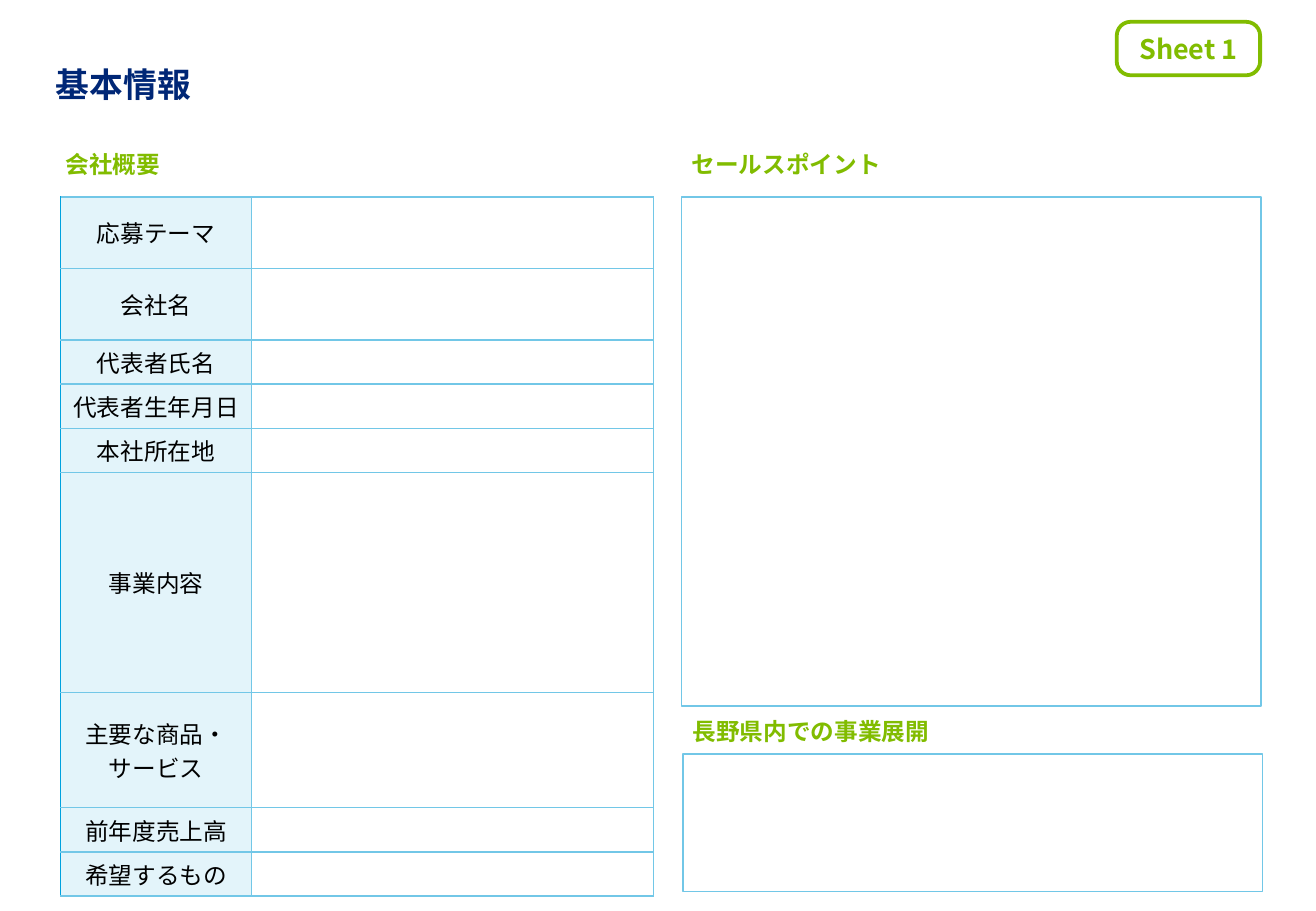
import pptx
import pptx.util
import pptx.dml.color
import pptx.enum.shapes
import pptx.enum.text
import pptx.oxml
import pptx.oxml.ns

WIDE, HIGH = 10.83, 7.5
LEFT, RIGHT, TOP = 0.5, 5.61, 1.62
HALF = 4.77
SANS, NOTO = "Arial", "Noto Sans CJK JP"
NAVY, GREEN, BLUE, EDGE = "002776", "81BC00", "72C7E7", "00A1DE"
PALE, BLACK, WHITE = "E3F4FA", "000000", "FFFFFF"

TITLE = "基本情報"
BADGE = "Sheet 1"
HEADS = [
    ("会社概要", 0.46, 1.11, 0.47),
    ("セールスポイント", RIGHT, 1.11, 0.47),
    ("長野県内での事業展開", RIGHT + 0.01, 5.85, 0.32),
]
BOXES = [(RIGHT, TOP, 4.19), (RIGHT + 0.01, 6.21, 1.13)]
COLS = [1.57, 3.31]
ROWS = [
    ("応募テーマ", 0.59),
    ("会社名", 0.59),
    ("代表者氏名", 0.36),
    ("代表者生年月日", 0.36),
    ("本社所在地", 0.36),
    ("事業内容", 1.81),
    ("主要な商品・サービス", 0.95),
    ("前年度売上高", 0.36),
    ("希望するもの", 0.36),
]

Inch, Pt = pptx.util.Inches, pptx.util.Pt
Align, Anchor = pptx.enum.text.PP_ALIGN, pptx.enum.text.MSO_ANCHOR
Shape = pptx.enum.shapes.MSO_SHAPE


def tint(text):
    return pptx.dml.color.RGBColor.from_string(text)


def node(xml):
    return pptx.oxml.parse_xml(xml.replace(">", f" {pptx.oxml.ns.nsdecls('a')}>", 1))


def style(para, size, face, color, bold=False, align=Align.LEFT):
    para.alignment = align
    for run in para.runs:
        run.font.size, run.font.name, run.font.bold = Pt(size), face, bold
        run.font.color.rgb = tint(color)
        run.font._element.find(pptx.oxml.ns.qn("a:latin")).addnext(
            node(f'<a:ea typeface="{NOTO}"></a:ea>'))


def place(item, left, top, width, height):
    item.left, item.top = Inch(left), Inch(top)
    item.width, item.height = Inch(width), Inch(height)


def frame(item, text, pad, anchor):
    area = item.text_frame
    area.text = text
    area.word_wrap = True
    area.auto_size = pptx.enum.text.MSO_AUTO_SIZE.NONE
    area.vertical_anchor = anchor
    area.margin_left = area.margin_right = Inch(pad)
    area.margin_top = area.margin_bottom = Inch(pad)
    return area.paragraphs[0]


def box(kind, left, top, width, height, color, weight):
    item = slide.shapes.add_shape(
        kind, Inch(left), Inch(top), Inch(width), Inch(height))
    item.shadow.inherit = False
    item.fill.solid()
    item.fill.fore_color.rgb = tint(WHITE)
    item.line.color.rgb = tint(color)
    item.line.width = Pt(weight)
    return item


def edges(cell, first):
    prop = cell._tc.get_or_add_tcPr()
    for spot, side in enumerate("LRTB"):
        color = EDGE if first and side == "L" else BLUE
        prop.insert(spot, node(
            f'<a:ln{side} w="12700"><a:solidFill><a:srgbClr val="{color}"/>'
            f'</a:solidFill></a:ln{side}>'))


deck = pptx.Presentation()
deck.slide_width, deck.slide_height = Inch(WIDE), Inch(HIGH)
slide = deck.slides.add_slide(deck.slide_layouts[1])

title, body = slide.placeholders
place(title, 0.46, 0.15, 9.92, 0.71)
style(frame(title, TITLE, 0, Anchor.BOTTOM), 20, SANS, NAVY, True)

for spot, (text, left, top, height) in enumerate(HEADS):
    item = slide.shapes.add_textbox(0, 0, 0, 0) if spot else body
    place(item, left, top, 4.72, height)
    para = frame(item, text, 0.08, Anchor.MIDDLE)
    style(para, 14, SANS, GREEN, True)
    para.line_spacing, para.space_before = 1.06, Pt(0)
    prop = para._p.get_or_add_pPr()
    prop.set("marL", "0")
    prop.set("indent", "0")
    prop.append(node("<a:buNone></a:buNone>"))

grid = slide.shapes.add_table(
    len(ROWS), len(COLS), Inch(LEFT), Inch(TOP),
    Inch(sum(COLS)), Inch(sum(high for text, high in ROWS))).table
for col, wide in enumerate(COLS):
    grid.columns[col].width = Inch(wide)
for row, (text, high) in enumerate(ROWS):
    grid.rows[row].height = Inch(high)
    for col in range(len(COLS)):
        cell = grid.cell(row, col)
        cell.margin_left = cell.margin_right = Inch(0.04)
        cell.margin_top = cell.margin_bottom = Inch(0.04)
        cell.vertical_anchor = Anchor.MIDDLE
        cell.fill.solid()
        cell.fill.fore_color.rgb = tint(WHITE if col else PALE)
        para = cell.text_frame.paragraphs[0]
        if col:
            para._p.append(node('<a:endParaRPr sz="1400"></a:endParaRPr>'))
        else:
            para.text = text
            style(para, 14, NOTO, BLACK, align=Align.CENTER)
        edges(cell, col == 0)

for left, top, height in BOXES:
    box(Shape.RECTANGLE, left, top, HALF, height, BLUE, 1)

badge = box(Shape.ROUNDED_RECTANGLE, 9.19, 0.18, 1.18, 0.44, GREEN, 2.25)
badge.adjustments[0] = 0.26
style(frame(badge, BADGE, 0.08, Anchor.MIDDLE), 16, NOTO, GREEN, True, Align.CENTER)

deck.save("out.pptx")
